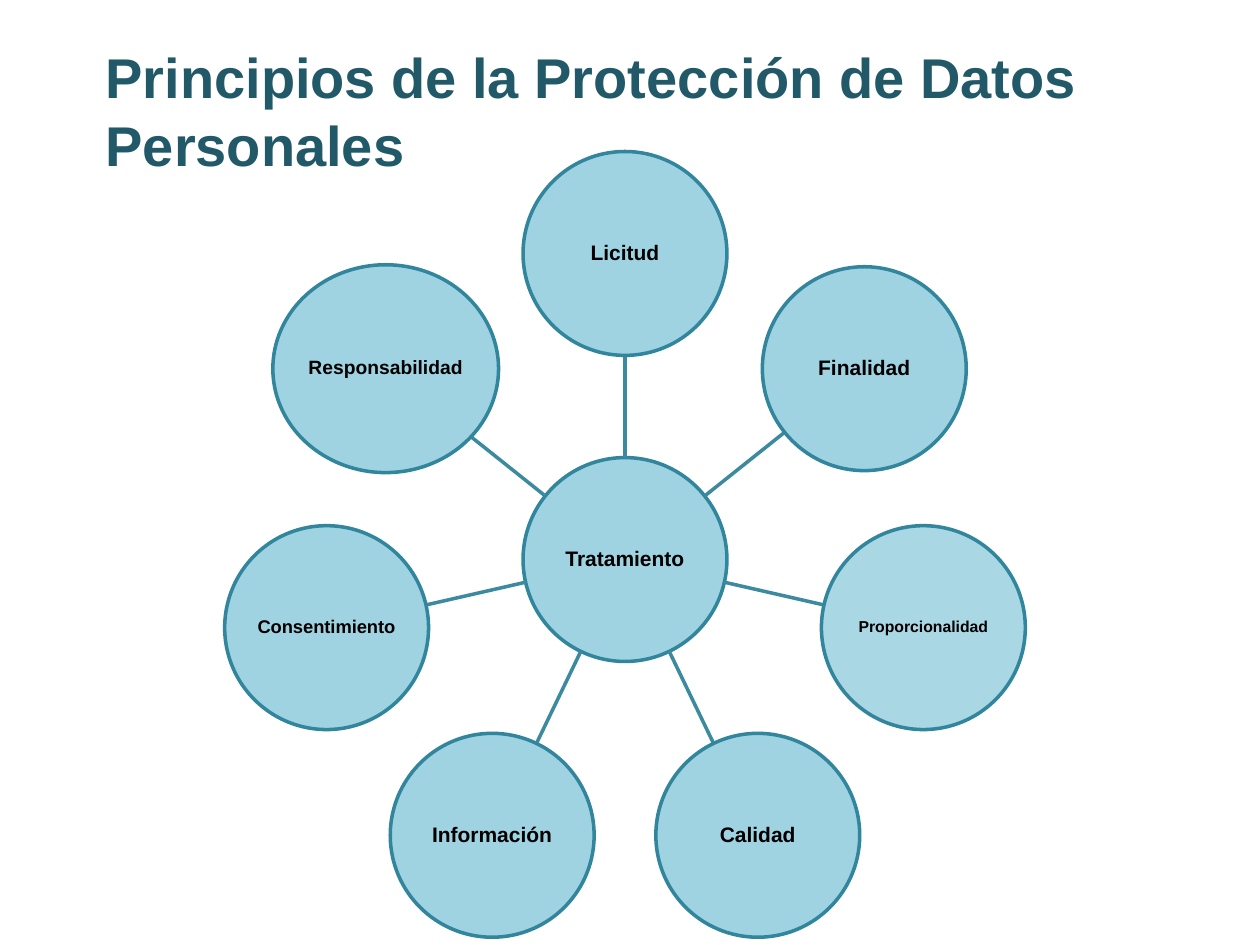
from math import cos, hypot, radians, sin

from lxml.etree import SubElement
from pptx import Presentation
from pptx.dml.color import RGBColor
from pptx.enum.shapes import MSO_CONNECTOR as Connector, MSO_SHAPE as Shape
from pptx.enum.text import MSO_ANCHOR as Anchor, PP_ALIGN as Align
from pptx.oxml.ns import qn
from pptx.util import Cm, Pt

TITLE = "Principios de la Protección de Datos Personales"
HUB = "Tratamiento"
DIAMETER = 4.11
PRINCIPLES = [
    ("Licitud", 12, DIAMETER, DIAMETER),
    ("Finalidad", 12, DIAMETER, DIAMETER),
    ("Proporcionalidad", 9, DIAMETER, DIAMETER),
    ("Calidad", 12, DIAMETER, DIAMETER),
    ("Información", 12, DIAMETER, DIAMETER),
    ("Consentimiento", 10.5, DIAMETER, DIAMETER),
    ("Responsabilidad", 11, 4.55, 4.19),
]
HUB_X, HUB_Y = 12.6, 11.28
RING_RADIUS = 6.17

TITLE_COLOR = RGBColor(0x21, 0x59, 0x68)
CIRCLE_FILL = RGBColor(0x93, 0xCD, 0xDD)
ACCENT_FILL = RGBColor(0x4B, 0xAC, 0xC6)
OUTLINE = RGBColor(0x31, 0x85, 0x9C)
SPOKE = RGBColor(0x3C, 0x8A, 0x9F)
BLACK = RGBColor(0, 0, 0)
FILLS = {"Proporcionalidad": (ACCENT_FILL, 47)}

MARGINS = ("margin_left", "margin_top", "margin_right", "margin_bottom")
CIRCLE_FRAME = {"word_wrap": True, "vertical_anchor": Anchor.MIDDLE,
                **dict.fromkeys(MARGINS, Cm(0.03))}
TITLE_FRAME = {"word_wrap": True, "vertical_anchor": Anchor.MIDDLE}


def apply(target, values):
    for name, value in values.items():
        setattr(target, name, value)


def write(shape, text, size, color, frame_format, paragraph_format):
    frame = shape.text_frame
    apply(frame, frame_format)
    paragraph = frame.paragraphs[0]
    apply(paragraph, paragraph_format)
    run = paragraph.add_run()
    run.text = text
    apply(run.font, {"name": "Arial", "size": Pt(size), "bold": True})
    run.font.color.rgb = color


def add_circle(slide, text, size, x, y, width, height):
    circle = slide.shapes.add_shape(
        Shape.OVAL, Cm(x - width / 2), Cm(y - height / 2), Cm(width), Cm(height))
    circle.shadow.inherit = False
    color, opacity = FILLS.get(text, (CIRCLE_FILL, 87))
    circle.fill.solid()
    circle.fill.fore_color.rgb = color
    fill = circle.element.spPr.find(qn("a:solidFill"))
    SubElement(fill[0], qn("a:alpha"), val=str(opacity * 1000))
    circle.line.color.rgb = OUTLINE
    circle.line.width = Pt(2)
    write(circle, text, size, BLACK, CIRCLE_FRAME,
          {"alignment": Align.CENTER, "line_spacing": 0.9})


def add_spoke(slide, angle, start, end):
    points = [Cm(value) for radius in (start, end)
              for value in (HUB_X + radius * cos(angle), HUB_Y + radius * sin(angle))]
    spoke = slide.shapes.add_connector(Connector.STRAIGHT, *points)
    spoke.line.color.rgb = SPOKE
    spoke.line.width = Pt(2)
    SubElement(spoke.element.spPr, qn("a:effectLst"))


def main():
    presentation = Presentation()
    presentation.slide_width, presentation.slide_height = Cm(25.4), Cm(19.05)
    slide = presentation.slides.add_slide(presentation.slide_layouts[6])

    title = slide.shapes.add_textbox(Cm(1.88), Cm(0.53), Cm(21.64), Cm(3.38))
    write(title, TITLE, 32, TITLE_COLOR, TITLE_FRAME, {"alignment": Align.LEFT})

    add_circle(slide, HUB, 12, HUB_X, HUB_Y, DIAMETER, DIAMETER)
    for index, (text, size, width, height) in enumerate(PRINCIPLES):
        angle = radians(index * 360 / len(PRINCIPLES) - 90)
        edge = 1 / hypot(cos(angle) * 2 / width, sin(angle) * 2 / height)
        add_spoke(slide, angle, DIAMETER / 2, RING_RADIUS - edge)
        add_circle(slide, text, size, HUB_X + RING_RADIUS * cos(angle),
                   HUB_Y + RING_RADIUS * sin(angle), width, height)

    presentation.save("out.pptx")


if __name__ == "__main__":
    main()
